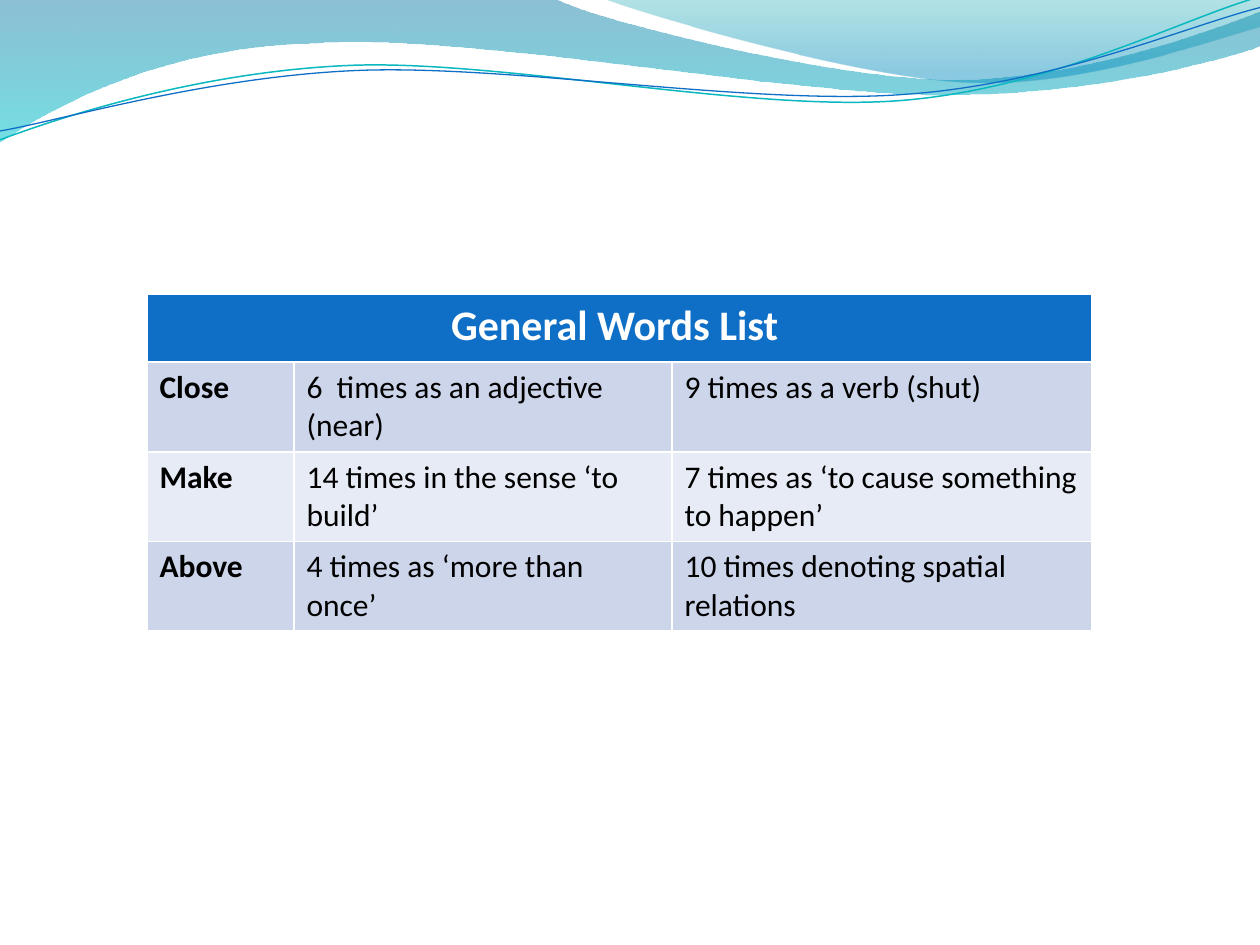
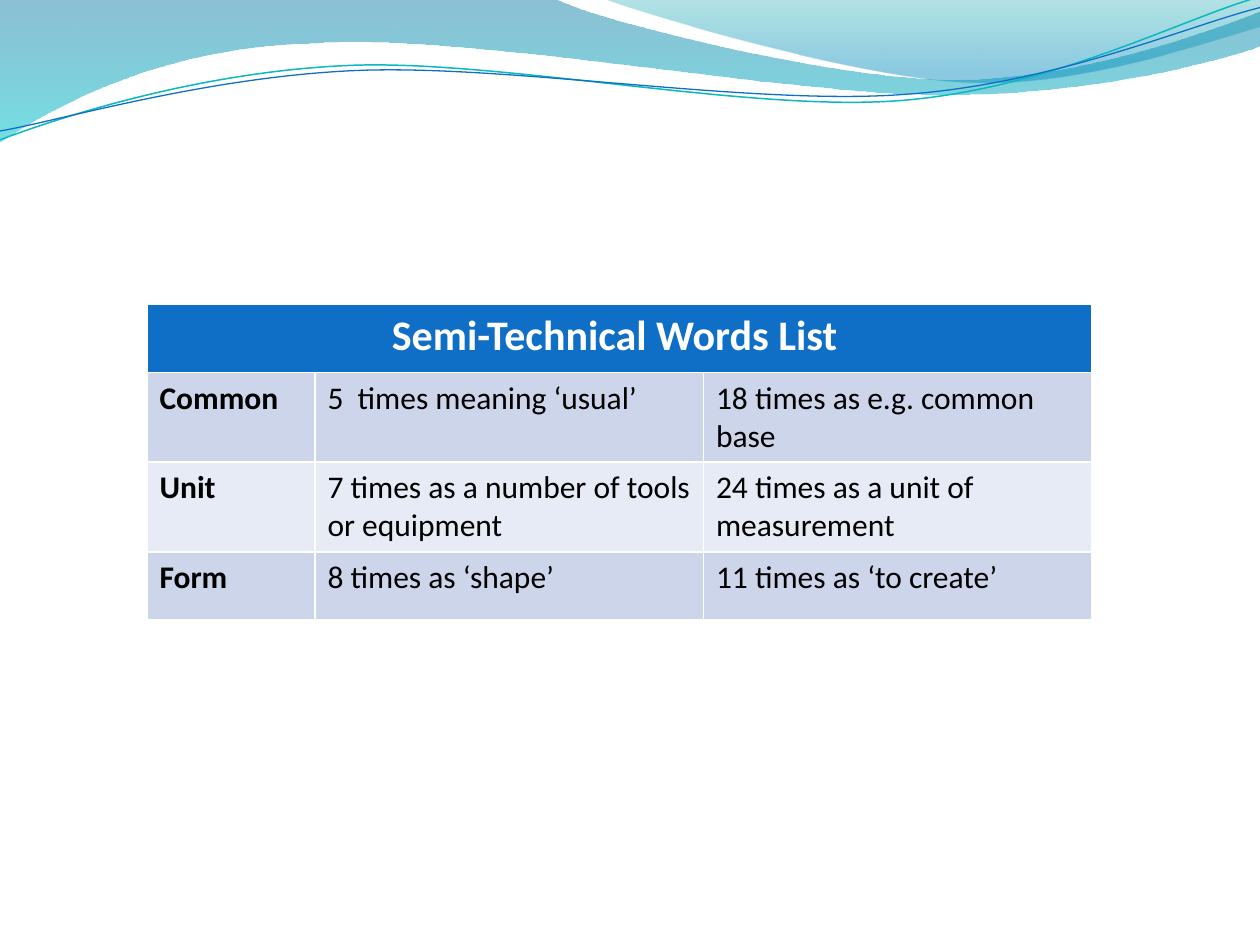
"""Two word-list slides under a shared band of waves."""
import pptx
import pptx.dml.color
import pptx.enum.text
import pptx.oxml
import pptx.oxml.ns
import pptx.util

RGB = pptx.dml.color.RGBColor
BLUE = RGB(0x0F, 0x6F, 0xC6)
TEAL = RGB(0x0A, 0xB8, 0xBF)
WHITE = RGB(0xFF, 0xFF, 0xFF)
BLACK = RGB(0, 0, 0)
BANDS = (RGB(0xCC, 0xD5, 0xEA), RGB(0xE7, 0xEB, 0xF5))
DEEP = RGB(0x00, 0x74, 0xA1)
AQUA = RGB(0x00, 0xC6, 0xCF)
SEA = RGB(0x00, 0xA1, 0xA9)
SKY = RGB(0x00, 0x8B, 0xBF)

FONT = "Calibri"
UNIT = pptx.util.Inches(1) / 12
LEFT = 14
ROWS = (6.5, 8.25, 6.5, 6.5)

# Each step holds one point for a line, or three for a curve.
LOW = [((0, 0),), ((4.4, -0.01),),
       ((4.76, 0.17), (6.64, 0.63), (7.58, 0.63)),
       ((8.53, 0.63), (9.58, 0.26), (10, 0.09)),
       ((10.01, 0.36),),
       ((9.83, 0.44), (8.7, 0.76), (7.46, 0.75)),
       ((6.22, 0.75), (3.82, 0.28), (2.57, 0.34)),
       ((1.29, 0.36), (0.46, 0.83), (-0.01, 1.13))]
HIGH = [((4.79, -0.01),),
        ((5.09, 0.11), (6.82, 0.62), (7.69, 0.65)),
        ((8.56, 0.69), (9.61, 0.32), (10, 0.21)),
        ((10, 0),)]
TEAL_LINE = [((0, 1.11),),
             ((0.48, 0.93), (1.58, 0.57), (2.77, 0.52)),
             ((3.95, 0.47), (5.93, 0.89), (7.13, 0.8)),
             ((8.33, 0.71), (9.38, 0.15), (9.98, -0.02))]
BLUE_LINE = [((0, 1.04),),
             ((0.47, 0.96), (1.64, 0.61), (2.83, 0.56)),
             ((4.03, 0.51), (5.97, 0.84), (7.17, 0.75)),
             ((8.36, 0.67), (9.41, 0.21), (10, 0.06))]

GENERAL = [("Close", "6  times as an adjective (near)", "9 times as a verb (shut)"),
           ("Make", "14 times in the sense ‘to build’",
            "7 times as ‘to cause something to happen’"),
           ("Above", "4 times as ‘more than once’",
            "10 times denoting spatial relations")]
SEMI = [("Common", "5  times meaning ‘usual’", "18 times as e.g. common base"),
        ("Unit", "7 times as a number of tools or equipment",
         "24 times as a unit of measurement"),
        ("Form", "8 times as ‘shape’", "11 times as ‘to create’")]


def grid(count):
    """Turn grid units into a length."""
    return pptx.util.Emu(round(count * UNIT))


def write(frame, text, size=18, color=BLACK, bold=False, align=None):
    """Put formatted text in a frame."""
    para = frame.paragraphs[0]
    para.alignment = align
    run = para.add_run()
    run.text = text
    run.font.name = FONT
    run.font.size = pptx.util.Pt(size)
    run.font.bold = bold
    run.font.color.rgb = color


def curve(slide, steps, close=False):
    """Draw a freeform of lines and cubic curves."""
    points = [tuple(map(pptx.util.Inches, point)) for step in steps for point in step]
    maker = slide.shapes.build_freeform(*points[0], scale=1.0)
    maker.add_line_segments(points[1:], close=close)
    shape = maker.convert_to_shape()
    shape.shadow.inherit = False
    nodes = iter(list(shape.element.iter(pptx.oxml.ns.qn("a:lnTo"))))
    for step in steps[1:]:
        first, *rest = [next(nodes) for _ in step]
        if rest:
            first.tag = pptx.oxml.ns.qn("a:cubicBezTo")
        for node in rest:
            first.append(node[0])
            node.getparent().remove(node)
    return shape


def wave(slide, steps, stops):
    """Draw a closed wave with a see-through gradient running down."""
    shape = curve(slide, steps, close=True)
    shape.line.fill.background()
    shape.fill.gradient()
    shape.fill.gradient_angle = 270
    for stop, (place, color, _) in zip(shape.fill.gradient_stops, stops):
        stop.position = place
        stop.color.rgb = color
    tints = shape.element.spPr.iter(pptx.oxml.ns.qn("a:srgbClr"))
    for tint, (_, _, share) in zip(tints, stops):
        alpha = pptx.oxml.parse_xml(
            f'<a:alpha {pptx.oxml.ns.nsdecls("a")} val="{share * 1000}"/>')
        tint.append(alpha)
    return shape


def stroke(slide, steps, color, width):
    """Draw an open curved line."""
    shape = curve(slide, steps)
    shape.fill.background()
    shape.line.color.rgb = color
    shape.line.width = pptx.util.Pt(width)
    return shape


def dress(slide, layout):
    """Draw the wave band and hand it to the layout that all slides share."""
    for holder in list(layout.placeholders):
        holder.element.getparent().remove(holder.element)
    band = [wave(slide, LOW, [(0, DEEP, 45), (1, AQUA, 55)]),
            wave(slide, HIGH, [(0, SEA, 30), (0.8, SKY, 45)]),
            stroke(slide, TEAL_LINE, TEAL, 0.85),
            stroke(slide, BLUE_LINE, BLUE, 0.75)]
    for shape in band:
        layout.shapes.element.append(shape.element)


def paint(cell, color):
    """Fill a table cell."""
    cell.fill.solid()
    cell.fill.fore_color.rgb = color


def chart_words(slide, title, words, top, widths):
    """Add a word table with a merged heading row."""
    table = slide.shapes.add_table(
        len(ROWS), len(widths), grid(LEFT), grid(top),
        grid(sum(widths)), grid(sum(ROWS))).table
    for column, width in zip(table.columns, widths):
        column.width = grid(width)
    for row, height in zip(table.rows, ROWS):
        row.height = grid(height)
    head = table.cell(0, 0)
    head.merge(table.cell(0, len(widths) - 1))
    paint(head, BLUE)
    write(head.text_frame, title, size=24, color=WHITE, bold=True,
          align=pptx.enum.text.PP_ALIGN.CENTER)
    for down, line in enumerate(words):
        for over, text in enumerate(line):
            cell = table.cell(down + 1, over)
            paint(cell, BANDS[down % 2])
            write(cell.text_frame, text, bold=over == 0)


def main():
    """Build and save both slides."""
    deck = pptx.Presentation()
    deck.slide_width = pptx.util.Inches(10)
    deck.slide_height = pptx.util.Inches(7.5)
    layout = deck.slide_layouts[6]
    first, second = [deck.slides.add_slide(layout) for _ in range(2)]
    dress(first, layout)
    chart_words(first, "General Words List ", GENERAL, 28, (14, 36, 40))
    chart_words(second, "Semi-Technical Words List ", SEMI, 29, (16, 37, 37))
    deck.save("out.pptx")


if __name__ == "__main__":
    main()
